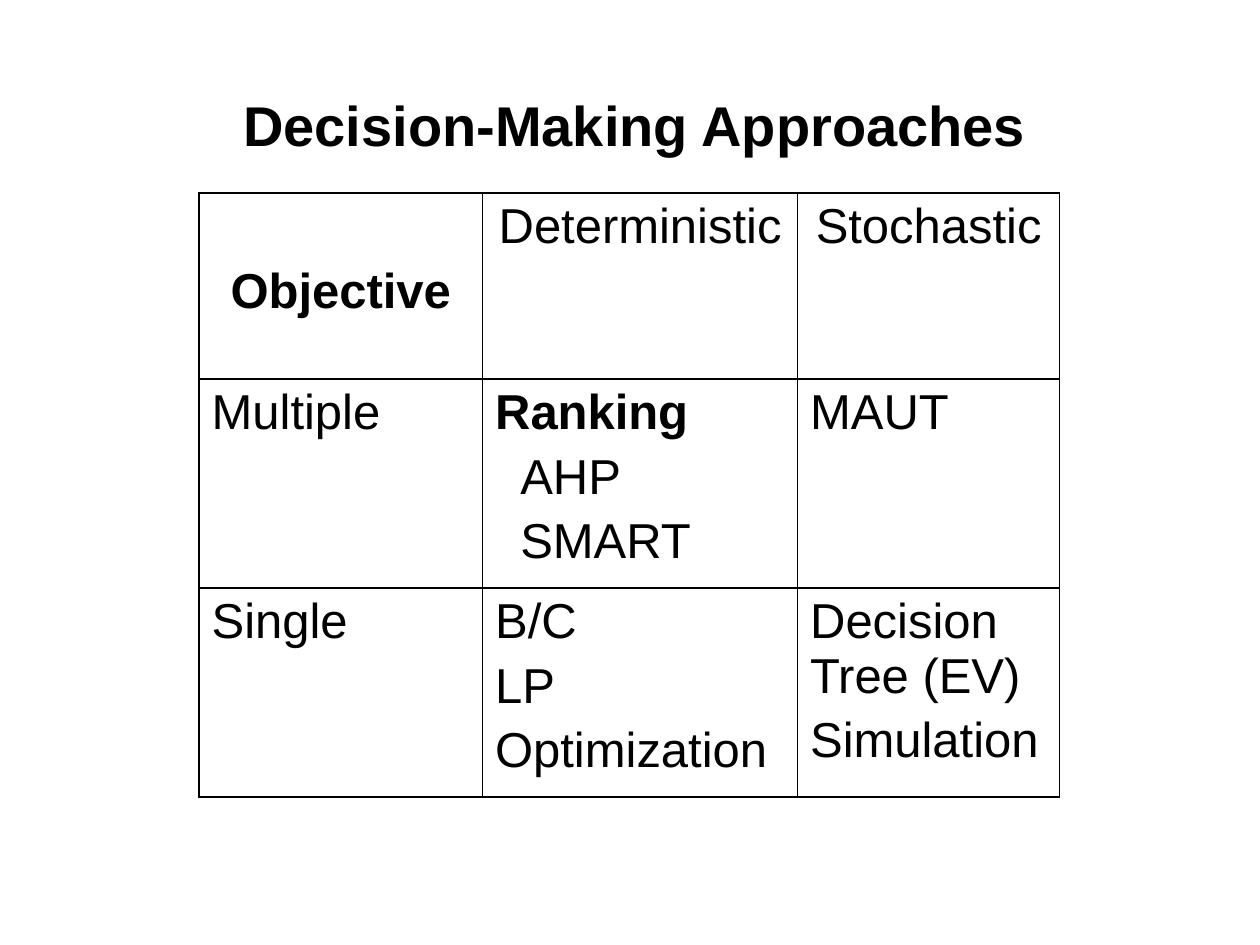
from lxml import etree
from pptx import Presentation
from pptx.dml.color import RGBColor
from pptx.enum.text import MSO_ANCHOR, MSO_AUTO_SIZE, PP_ALIGN
from pptx.oxml.ns import qn
from pptx.util import Inches, Pt

LEFT, CENTER = PP_ALIGN.LEFT, PP_ALIGN.CENTER
TOP = MSO_ANCHOR.TOP
FIT_SHAPE = MSO_AUTO_SIZE.SHAPE_TO_FIT_TEXT
TITLE_ONLY = 5
BLACK = "000000"

# Content: each cell is a list of lines
TITLE = "Decision-Making Approaches"
ROWS = [
    [["Objective"], ["Deterministic"], ["Stochastic"]],
    [["Multiple"], ["Ranking", "AHP", "SMART"], ["MAUT"]],
    [["Single"], ["B/C", "LP", "Optimization"], ["Decision Tree (EV)", "Simulation"]],
]
BOLD = {"Objective", "Ranking"}
INDENTED = {"AHP", "SMART"}
COLUMN_WIDTHS = [2.25, 2.5, 2.08]
ROW_HEIGHT = 1.48
OBJECTIVE_MARGIN = 0.57  # drops the label one line below its neighbours


def color(value):
    return RGBColor.from_string(value)


def write(para, text, size=28, bold=False, align=LEFT, before=0, indent=0):
    para.alignment = align
    para.space_before = Pt(before)
    if indent:
        properties = para._p.get_or_add_pPr()
        properties.set("marL", str(Inches(indent)))
        properties.set("indent", "0")
    span = para.add_run()
    span.text = text
    span.font.name = "Arial"
    span.font.size = Pt(size)
    span.font.bold = bold
    span.font.color.rgb = color(BLACK)


def add_borders(cell, value=BLACK, width=1):
    properties = cell._tc.get_or_add_tcPr()
    for index, side in enumerate(("a:lnL", "a:lnR", "a:lnT", "a:lnB")):
        line = etree.Element(qn(side), w=str(Pt(width)))
        fill = etree.SubElement(line, qn("a:solidFill"))
        etree.SubElement(fill, qn("a:srgbClr"), val=value)
        properties.insert(index, line)


deck = Presentation()
deck.slide_width, deck.slide_height = Inches(10), Inches(7.5)
page = deck.slides.add_slide(deck.slide_layouts[TITLE_ONLY])

# Title
title = page.shapes.title
title.left, title.top = Inches(1.83), Inches(0.67)
title.width, title.height = Inches(6.46), Inches(0.64)
title.text_frame.word_wrap = False
title.text_frame.auto_size = FIT_SHAPE
title.text_frame.vertical_anchor = TOP
write(title.text_frame.paragraphs[0], TITLE, size=32, bold=True)

# Table
table = page.shapes.add_table(
    len(ROWS), len(COLUMN_WIDTHS), Inches(1.58), Inches(1.53),
    Inches(sum(COLUMN_WIDTHS)), Inches(ROW_HEIGHT * len(ROWS))).table
table.first_row = table.horz_banding = False
for column, width in zip(table.columns, COLUMN_WIDTHS):
    column.width = Inches(width)

for row_index, row in enumerate(ROWS):
    table.rows[row_index].height = Inches(ROW_HEIGHT)
    for column_index, lines in enumerate(row):
        cell = table.cell(row_index, column_index)
        cell.fill.background()
        add_borders(cell)
        frame = cell.text_frame
        for line_index, text in enumerate(lines):
            para = frame.add_paragraph() if line_index else frame.paragraphs[0]
            write(para, text, bold=text in BOLD,
                  align=LEFT if row_index else CENTER,
                  before=5.6 if line_index else 0,
                  indent=0.2 if text in INDENTED else 0)
table.cell(0, 0).margin_top = Inches(OBJECTIVE_MARGIN)

deck.save("out.pptx")
